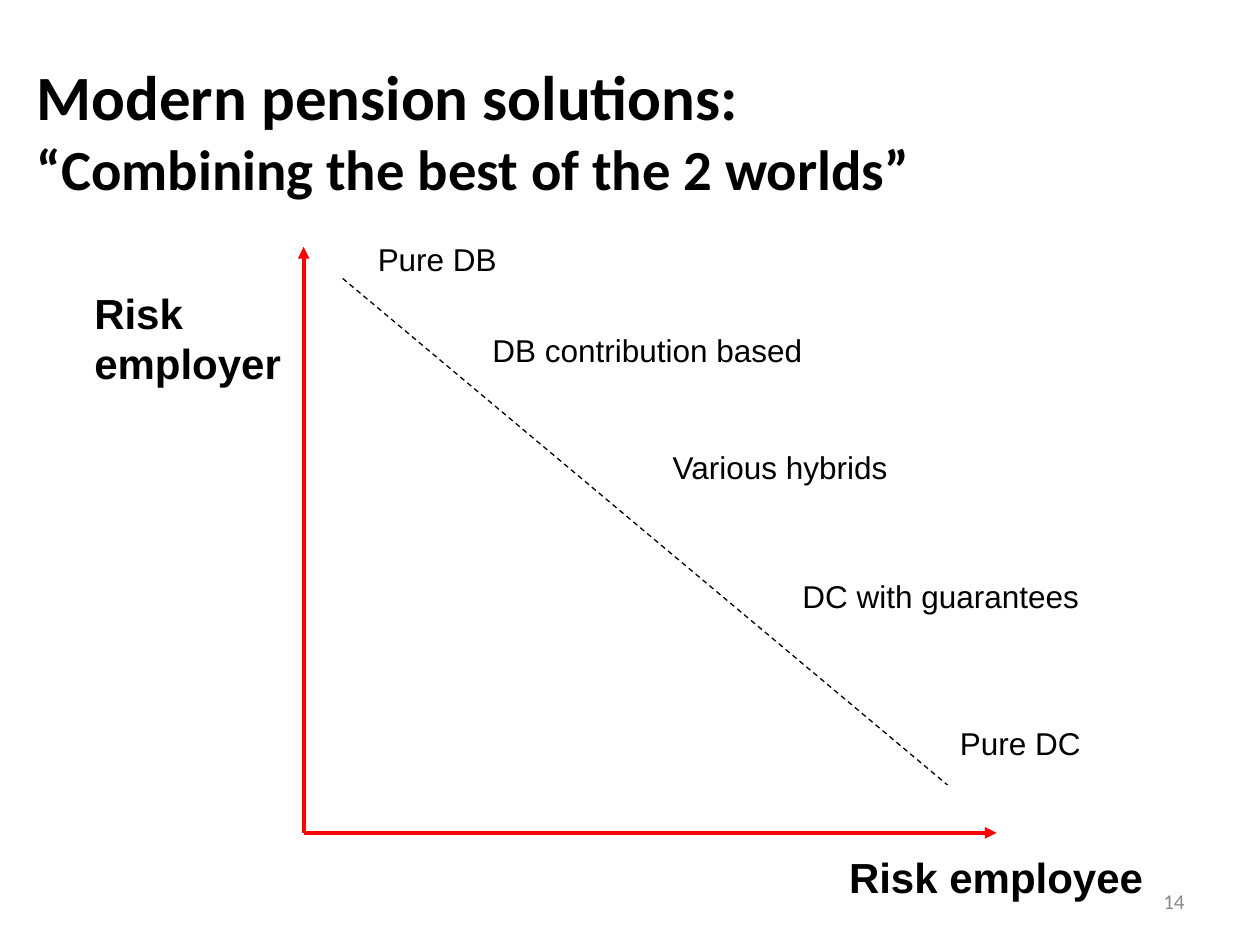
from lxml.etree import SubElement
from pptx import Presentation
from pptx.dml.color import RGBColor
from pptx.enum.dml import MSO_LINE
from pptx.enum.shapes import MSO_CONNECTOR
from pptx.enum.text import MSO_ANCHOR, PP_ALIGN
from pptx.oxml.ns import qn
from pptx.util import Inches, Pt

BLACK = RGBColor(0, 0, 0)
RED = RGBColor(0xFF, 0, 0)
GREY = RGBColor(0x89, 0x89, 0x89)

TITLE = [("Modern pension solutions:", 36),
         ("“Combining the best of the 2 worlds”", 32.4)]
# Text, left, top, width
PLANS = [
    ("Pure DB", 2.9, 1.86, 1.16),
    ("DB contribution based", 3.81, 2.58, 2.69),
    ("Various hybrids", 5.24, 3.51, 1.92),
    ("DC with guarantees", 6.27, 4.53, 2.42),
    ("Pure DC", 7.52, 5.7, 1.17),
]
# Lines, left, top, width, height
AXIS_NAMES = [
    (["Risk", "employer"], 0.65, 1.41, 1.7, 1.72),
    (["Risk employee"], 6.64, 6.7, 2.56, 0.51),
]
ORIGIN = (2.41, 6.61)
AXIS_TIPS = [(2.41, 1.96), (7.91, 6.61)]
TREND = [(2.72, 2.21), (7.52, 6.23)]


def style(run, size, color=BLACK, bold=False, name="Arial"):
    font = run.font
    font.size, font.bold, font.name = Pt(size), bold, name
    font.color.rgb = color


def label(slide, lines, box, size, wrap=False, align=PP_ALIGN.LEFT,
          anchor=MSO_ANCHOR.TOP, **look):
    frame = slide.shapes.add_textbox(*map(Inches, box)).text_frame
    frame.word_wrap = wrap
    frame.vertical_anchor = anchor
    for i, text in enumerate(lines):
        para = frame.add_paragraph() if i else frame.paragraphs[0]
        para.alignment = align
        run = para.add_run()
        run.text = text
        style(run, size, **look)


def draw_line(slide, start, end, color, width):
    line = slide.shapes.add_connector(
        MSO_CONNECTOR.STRAIGHT, *map(Inches, (*start, *end)))
    line.line.color.rgb = color
    line.line.width = Pt(width)
    SubElement(line._element.spPr, qn("a:effectLst"))
    return line


def set_title(slide):
    title = slide.shapes.title
    title.left, title.top, title.width, title.height = map(
        Inches, (0.19, 0.22, 9, 1.19))
    frame = title.text_frame
    frame.vertical_anchor = MSO_ANCHOR.TOP
    frame.margin_top = Inches(0.24)
    para = frame.paragraphs[0]
    para.alignment = PP_ALIGN.LEFT
    for i, (text, size) in enumerate(TITLE):
        if i:
            para.add_line_break()
        run = para.add_run()
        run.text = text
        style(run, size, bold=True, name="Calibri")


def main():
    deck = Presentation()
    deck.slide_width, deck.slide_height = Inches(10), Inches(7.5)
    slide = deck.slides.add_slide(deck.slide_layouts[5])
    set_title(slide)
    label(slide, ["14"], (7.17, 6.95, 2.33, 0.4), 12, wrap=True,
          align=PP_ALIGN.RIGHT, anchor=MSO_ANCHOR.MIDDLE,
          color=GREY, name="Calibri")

    for tip in AXIS_TIPS:
        axis = draw_line(slide, tip, ORIGIN, RED, 2.25)
        SubElement(axis.line._get_or_add_ln(), qn("a:headEnd"), type="triangle")
    for lines, *box in AXIS_NAMES:
        label(slide, lines, box, 24, anchor=MSO_ANCHOR.BOTTOM, bold=True)

    trend = draw_line(slide, *TREND, BLACK, 0.75)
    trend.line.dash_style = MSO_LINE.DASH
    for text, left, top, width in PLANS:
        label(slide, [text], (left, top, width, 0.4), 18)
    deck.save("out.pptx")


if __name__ == "__main__":
    main()
